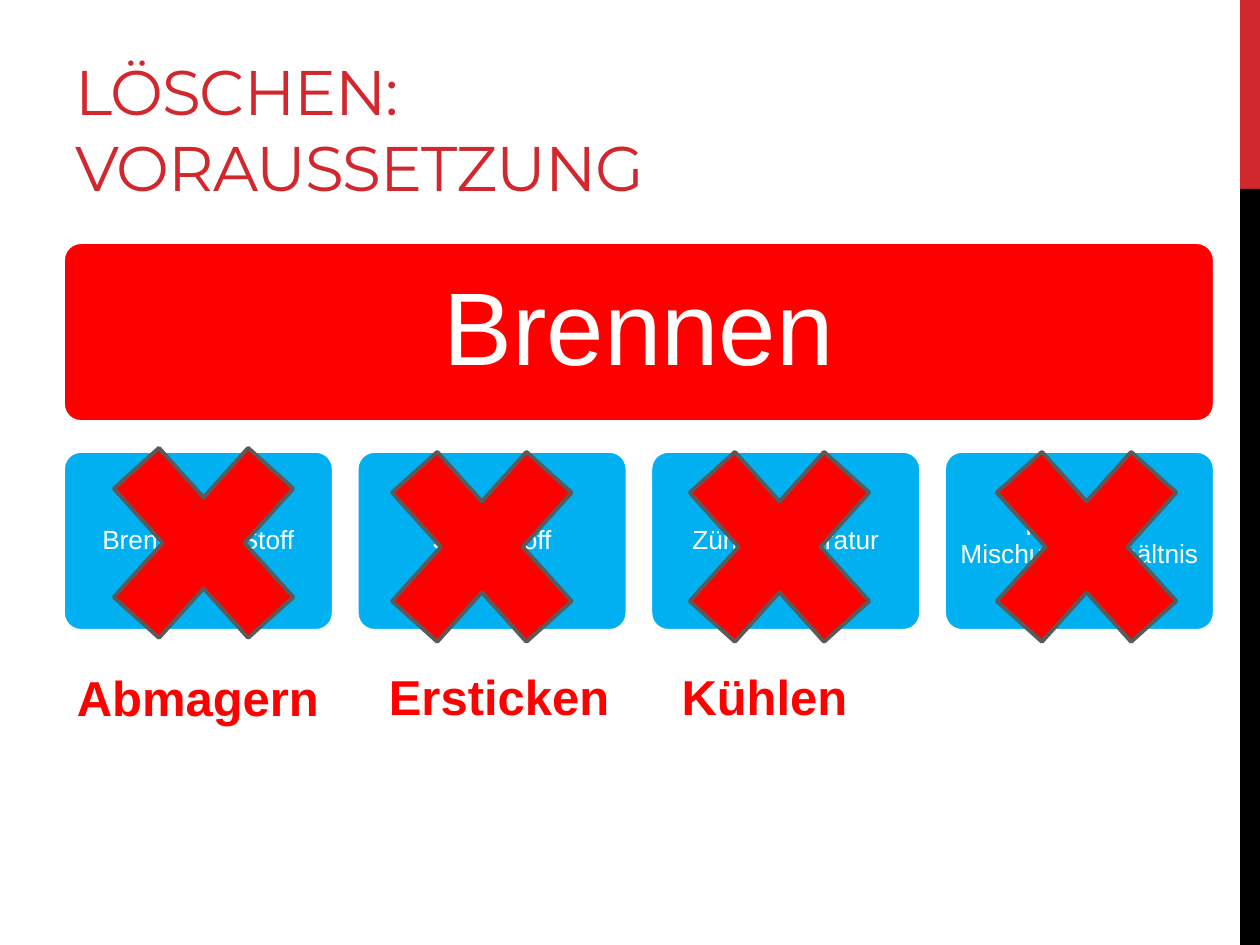
from dataclasses import dataclass

from pptx import Presentation
from pptx.dml.color import RGBColor
from pptx.enum.shapes import MSO_SHAPE
from pptx.enum.text import MSO_ANCHOR, PP_ALIGN
from pptx.util import Cm, Pt


@dataclass(frozen=True)
class Theme:
    """Colours, fonts and type sizes of the slide."""
    accent: RGBColor = RGBColor(0xD1, 0x28, 0x2E)
    black: RGBColor = RGBColor(0, 0, 0)
    white: RGBColor = RGBColor(0xFF, 0xFF, 0xFF)
    red: RGBColor = RGBColor(0xFF, 0, 0)
    blue: RGBColor = RGBColor(0, 0xB0, 0xF0)
    grey: RGBColor = RGBColor(0x5A, 0x5A, 0x5A)
    heading_font: str = "Montserrat"
    body_font: str = "Arial"
    title_size: int = 36
    banner_size: int = 59
    card_size: int = 15
    label_size: int = 28
    outline: float = 2.25


@dataclass(frozen=True)
class Box:
    """A rectangle in centimetres."""
    left: float
    top: float
    width: float
    height: float

    def emu(self):
        """Return the four lengths for python-pptx."""
        return Cm(self.left), Cm(self.top), Cm(self.width), Cm(self.height)


@dataclass(frozen=True)
class Condition:
    """A condition for fire, its countermeasure and the offsets of its marks."""
    name: str
    remedy: str
    cross_offset: tuple
    label_offset: tuple


THEME = Theme()
CONDITIONS = [
    Condition("Brennbarer Stoff", "Abmagern", (0.23, -1.04), (0.03, 4.25)),
    Condition("Sauerstoff", "Ersticken", (-0.08, -0.96), (0.4, 4.22)),
    Condition("Zündtemperatur", "Kühlen", (0, -0.96), (0.38, 4.22)),
    Condition("Richtiges Mischungsverhältnis", "", (0.27, -0.96), (0, 0)),
]


def add_filled_shape(slide, kind, box, fill, line=None):
    """Add a flat shape with an optional outline."""
    shape = slide.shapes.add_shape(kind, *box.emu())
    shape.shadow.inherit = False
    shape.fill.solid()
    shape.fill.fore_color.rgb = fill
    if line is None:
        shape.line.fill.background()
    else:
        shape.line.color.rgb = line
        shape.line.width = Pt(THEME.outline)
    return shape


def write_text(shape, text, size, color, font=THEME.body_font, bold=False):
    """Set one wrapped paragraph and return it."""
    text_frame = shape.text_frame
    text_frame.text = text
    text_frame.word_wrap = True
    paragraph = text_frame.paragraphs[0]
    run_font = paragraph.runs[0].font
    run_font.name = font
    run_font.size = Pt(size)
    run_font.bold = bold
    run_font.color.rgb = color
    return paragraph


def add_side_bar(slide, box):
    """Add the bar whose top fifth is accented."""
    accent_height = box.height / 5
    add_filled_shape(slide, MSO_SHAPE.RECTANGLE,
                     Box(box.left, box.top, box.width, accent_height), THEME.accent)
    add_filled_shape(slide, MSO_SHAPE.RECTANGLE,
                     Box(box.left, box.top + accent_height, box.width,
                         box.height - accent_height), THEME.black)


def add_title(slide, box):
    """Add the slide title, resting on the bottom of its box."""
    title = slide.shapes.add_textbox(*box.emu())
    paragraph = write_text(title, "LÖSCHEN: VORAUSSETZUNG", THEME.title_size,
                           THEME.accent, THEME.heading_font)
    title.text_frame.vertical_anchor = MSO_ANCHOR.BOTTOM
    paragraph.runs[0].font._element.set("spc", "-60")


def add_card(slide, box, text, fill, size, inset):
    """Add a rounded card with centred text."""
    card = add_filled_shape(slide, MSO_SHAPE.ROUNDED_RECTANGLE, box, fill, THEME.white)
    card.adjustments[0] = 0.1
    paragraph = write_text(card, text, size, THEME.white)
    paragraph.alignment = PP_ALIGN.CENTER
    paragraph.line_spacing = 0.9
    text_frame = card.text_frame
    text_frame.vertical_anchor = MSO_ANCHOR.MIDDLE
    text_frame.margin_left = text_frame.margin_right = Cm(inset)
    text_frame.margin_top = text_frame.margin_bottom = Cm(inset)


def add_condition(slide, box, condition):
    """Add a crossed-out condition and the countermeasure below it."""
    add_card(slide, box, condition.name, THEME.blue, THEME.card_size, 0.15)
    shift_x, shift_y = condition.cross_offset
    add_filled_shape(slide, MSO_SHAPE.MATH_MULTIPLY,
                     Box(box.left + shift_x, box.top + shift_y, 5.21, 5.79),
                     THEME.red, THEME.grey)
    if condition.remedy:
        shift_x, shift_y = condition.label_offset
        label_box = Box(box.left + shift_x, box.top + shift_y, 5.41, 1.45)
        label = slide.shapes.add_textbox(*label_box.emu())
        write_text(label, condition.remedy, THEME.label_size, THEME.red, bold=True)


def add_conditions(slide, box, gap):
    """Spread the conditions evenly over the box."""
    count = len(CONDITIONS)
    width = (box.width - gap * (count - 1)) / count
    for index, condition in enumerate(CONDITIONS):
        left = box.left + index * (width + gap)
        add_condition(slide, Box(left, box.top, width, box.height), condition)


def main():
    """Build and save the presentation."""
    presentation = Presentation()
    presentation.slide_width = Cm(25.4)
    presentation.slide_height = Cm(19.05)
    slide = presentation.slides.add_slide(presentation.slide_layouts[6])
    add_side_bar(slide, Box(25, 0, 0.4, 19.05))
    add_title(slide, Box(1.27, 0.43, 16.08, 3.81))
    add_card(slide, Box(1.27, 4.88, 23.22, 3.63), "Brennen",
             THEME.red, THEME.banner_size, 0.63)
    add_conditions(slide, Box(1.27, 9.09, 23.22, 3.63), 0.46)
    presentation.save("out.pptx")


if __name__ == "__main__":
    main()
